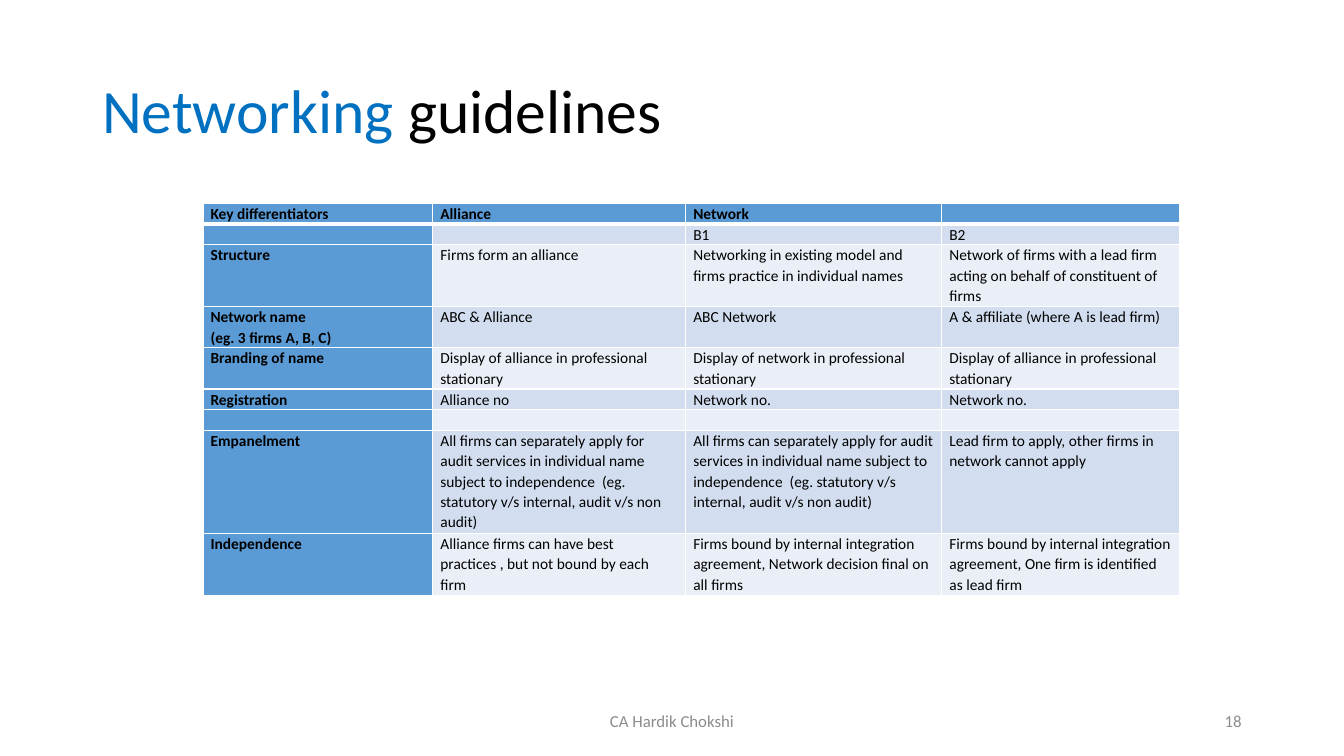
from lxml import etree
from pptx import Presentation
from pptx.dml.color import RGBColor
from pptx.enum.text import MSO_ANCHOR, PP_ALIGN
from pptx.oxml.ns import qn
from pptx.util import Pt

LEFT, CENTER, RIGHT = PP_ALIGN.LEFT, PP_ALIGN.CENTER, PP_ALIGN.RIGHT
MIDDLE = MSO_ANCHOR.MIDDLE
FONT = "Calibri"
COLORS = {"accent": "0070C0", "text": "000000", "muted": "8C8C8C", "head": "5B9BD5",
          "dark_band": "D2DEEF", "light_band": "EAEFF7", "border": "FFFFFF"}
COL_WIDTHS = [164.2, 180.7, 182.9, 169.9]
LINE_HEIGHT = 14.74
EMPANELMENT = ("All firms can separately apply for audit services in individual name subject to "
               "independence  (eg. statutory v/s internal, audit v/s non audit)")
ROWS = [
    (1, ["Key differentiators", "Alliance", "Network", ""]),
    (1, ["", "", "B1", "B2"]),
    (3, ["Structure", "Firms form an alliance",
         "Networking in existing model and firms practice in individual names",
         "Network of firms with a lead firm acting on behalf of constituent of firms"]),
    (2, ["Network name\n(eg. 3 firms A, B, C)", "ABC & Alliance", "ABC Network",
         "A & affiliate (where A is lead firm)"]),
    (2, ["Branding of name", "Display of alliance in professional stationary",
         "Display of network in professional stationary",
         "Display of alliance in professional stationary"]),
    (1, ["Registration", "Alliance no", "Network no.", "Network no."]),
    (1, ["", "", "", ""]),
    (5, ["Empanelment", EMPANELMENT, EMPANELMENT,
         "Lead firm to apply, other firms in network cannot apply"]),
    (3, ["Independence", "Alliance firms can have best practices , but not bound by each firm",
         "Firms bound by internal integration agreement, Network decision final on all firms",
         "Firms bound by internal integration agreement, One firm is identified as lead firm"]),
]


def add_run(p, text, size, color, bold=False):
    """Add one formatted run to a paragraph."""
    r = p.add_run()
    r.text = text
    r.font.name, r.font.size, r.font.bold = FONT, Pt(size), bold
    r.font.color.rgb = RGBColor.from_string(COLORS[color])


def add_text(s, box, runs, size, align=LEFT, spacing=1.0):
    """Add a vertically centred line of (text, colour) runs in a box."""
    tf = s.shapes.add_textbox(*map(Pt, box)).text_frame
    tf.word_wrap, tf.vertical_anchor = True, MIDDLE
    p = tf.paragraphs[0]
    p.alignment, p.line_spacing = align, spacing
    for text, color in runs:
        add_run(p, text, size, color)


def set_borders(cell, top, bottom):
    """Draw the four cell borders, with the given top and bottom widths."""
    tcPr = cell._tc.get_or_add_tcPr()
    for i, (side, width) in enumerate((("L", 1), ("R", 1), ("T", top), ("B", bottom))):
        ln = etree.Element(qn(f"a:ln{side}"), w=str(Pt(width)))
        fill = etree.SubElement(ln, qn("a:solidFill"))
        etree.SubElement(fill, qn("a:srgbClr"), val=COLORS["border"])
        tcPr.insert(i, ln)


def fill_cell(cell, text, fill, bold):
    """Set a cell's fill, margins and text."""
    cell.fill.solid()
    cell.fill.fore_color.rgb = RGBColor.from_string(COLORS[fill])
    cell.margin_left = cell.margin_right = Pt(5.4)
    cell.margin_top = cell.margin_bottom = Pt(0)
    tf = cell.text_frame
    for i, line in enumerate(text.split("\n")):
        p = tf.add_paragraph() if i else tf.paragraphs[0]
        p.line_spacing = 1.07
        if line:
            add_run(p, line, 11, "text", bold)
        else:
            p._p.get_or_add_endParaRPr().set("sz", "1100")


def add_comparison(s, x, y):
    """Add the comparison table with its top left corner at x, y."""
    height = LINE_HEIGHT * sum(lines for lines, _ in ROWS)
    table = s.shapes.add_table(len(ROWS), len(COL_WIDTHS), Pt(x), Pt(y),
                               Pt(sum(COL_WIDTHS)), Pt(height)).table
    for column, width in zip(table.columns, COL_WIDTHS):
        column.width = Pt(width)
    for i, (lines, texts) in enumerate(ROWS):
        table.rows[i].height = Pt(lines * LINE_HEIGHT)
        band = "dark_band" if i % 2 else "light_band"
        for j, text in enumerate(texts):
            is_head = i == 0 or j == 0
            cell = table.cell(i, j)
            fill_cell(cell, text, "head" if is_head else band, is_head)
            set_borders(cell, 3 if i == 1 else 1, 3 if i == 0 else 1)


def add_footer(s, y, height):
    """Add the presenter name and the slide number."""
    add_text(s, (318, y, 324, height), [("CA Hardik Chokshi", "muted")], 12, CENTER)
    add_text(s, (678, y, 216, height), [("18", "muted")], 12, RIGHT)


def main():
    """Build and save the slide."""
    prs = Presentation()
    prs.slide_width, prs.slide_height = Pt(960), Pt(540)
    s = prs.slides.add_slide(prs.slide_layouts[6])
    add_text(s, (66, 28.75, 828, 104.4),
             [("Networking", "accent"), (" guidelines", "text")], 44, spacing=0.9)
    add_comparison(s, 145, 145.4)
    add_footer(s, 500.5, 28.75)
    prs.save("out.pptx")


if __name__ == "__main__":
    main()
